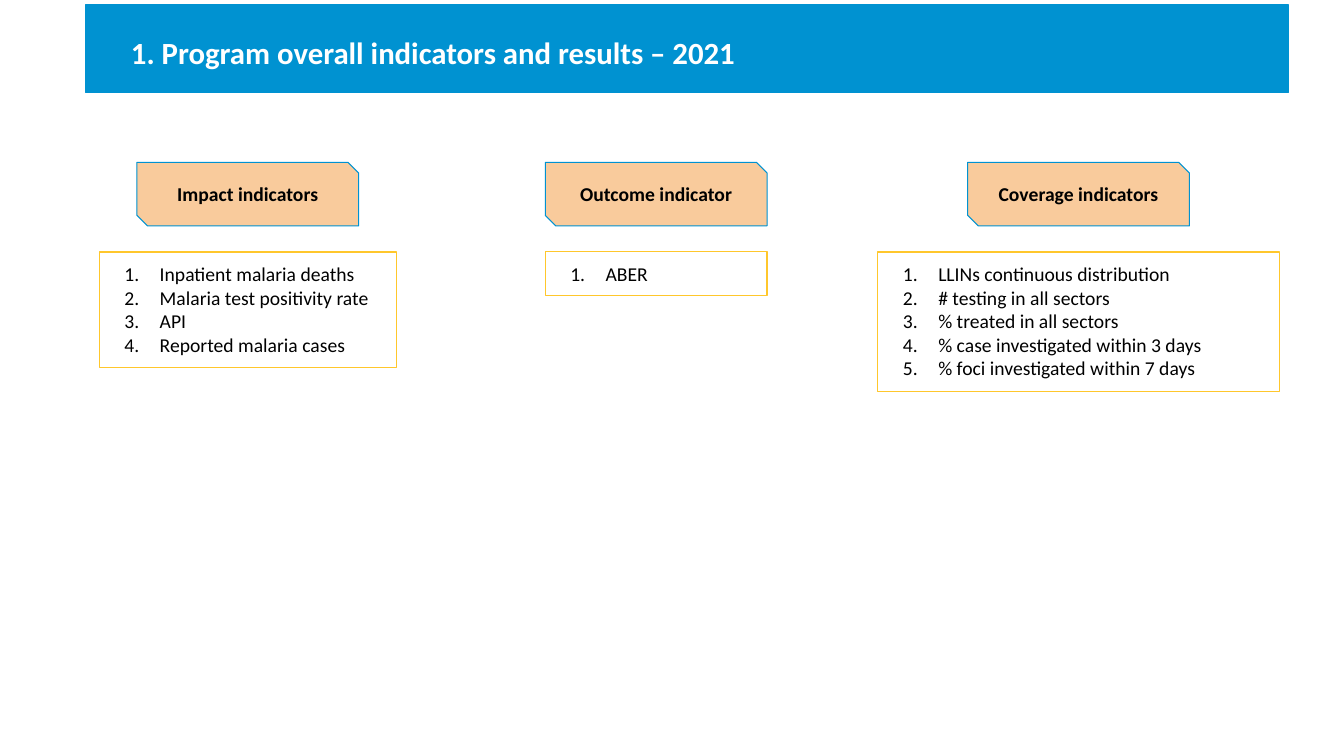
from pptx import Presentation
from pptx.dml.color import RGBColor as Rgb
from pptx.enum.shapes import MSO_SHAPE as Kind
from pptx.enum.text import MSO_ANCHOR as Anchor, PP_ALIGN as Align
from pptx.oxml.ns import qn
from pptx.util import Pt
from lxml.etree import SubElement as Sub

HUES = {"blue": "0092D1", "peach": "F9CB9C", "gold": "FFC72C",
        "white": "FFFFFF", "black": "000000"}
GROUPS = [
    (177, 212, "Impact indicators",
     ["Inpatient malaria deaths", "Malaria test positivity rate", "API",
      "Reported malaria cases"]),
    (468.7, 158.4, "Outcome indicator", ["ABER"]),
    (770.4, 286.6, "Coverage indicators",
     ["LLINs continuous distribution", "# testing in all sectors",
      "% treated in all sectors", "% case investigated within 3 days",
      "% foci investigated within 7 days"]),
]


def hue(name):
    """Return the named colour."""
    return Rgb.from_string(HUES[name])


def panel(slide, kind, left, top, width, height, line, fill=None):
    """Add an outlined shape, filled if a colour is given."""
    shape = slide.shapes.add_shape(kind, Pt(left), Pt(top), Pt(width), Pt(height))
    shape.shadow.inherit = False
    shape.line.color.rgb = hue(line)
    shape.line.width = Pt(0.75)
    if fill:
        shape.fill.solid()
        shape.fill.fore_color.rgb = hue(fill)
    else:
        shape.fill.background()
    return shape


def number(para):
    """Give a paragraph an automatic number and a hanging indent."""
    props = para._p.get_or_add_pPr()
    props.set("marL", str(Pt(36)))
    props.set("indent", str(-Pt(25.2)))
    Sub(props, qn("a:buFont"), typeface="Calibri")
    Sub(props, qn("a:buAutoNum"), type="arabicPeriod")


def write(shape, lines, size=14, color="black", bold=False, align=Align.LEFT,
          anchor=Anchor.MIDDLE, inset=(7.2, 7.2, 7.2, 7.2), space=1.0,
          listed=False):
    """Write one paragraph per line into a shape."""
    frame = shape.text_frame
    frame.word_wrap = True
    frame.vertical_anchor = anchor
    (frame.margin_left, frame.margin_top,
     frame.margin_right, frame.margin_bottom) = map(Pt, inset)
    frame.text = "\n".join(lines)
    for para in frame.paragraphs:
        para.alignment = align
        para.line_spacing = space
        if listed:
            number(para)
        for run in para.runs:
            font = run.font
            font.name, font.size, font.bold = "Calibri", Pt(size), bold
            font.color.rgb = hue(color)


def title(slide, text):
    """Add the title bar."""
    bar = panel(slide, Kind.RECTANGLE, 61.2, 3.6, 859, 62.6, "blue", "blue")
    write(bar, [text], size=22, color="white", bold=True,
          inset=(32.4, 0, 0, 0), space=1.2)


def group(slide, mid, width, head, items):
    """Add a heading and its numbered list, centred on mid."""
    tab = panel(slide, Kind.SNIP_2_DIAG_RECTANGLE, mid - 79.2, 116, 158.4, 45.4,
                "blue", "peach")
    tab.adjustments[0], tab.adjustments[1] = 0, 0.167
    write(tab, [head], bold=True, align=Align.CENTER)
    box = panel(slide, Kind.RECTANGLE, mid - width / 2, 180, width,
                14.4 + 17 * len(items), "gold")
    write(box, items, anchor=Anchor.TOP, listed=True)


def main():
    """Build and save the slide."""
    deck = Presentation()
    deck.slide_width, deck.slide_height = Pt(960), Pt(540)
    slide = deck.slides.add_slide(deck.slide_layouts[6])
    title(slide, "1. Program overall indicators and results – 2021")
    for item in GROUPS:
        group(slide, *item)
    deck.save("out.pptx")


if __name__ == "__main__":
    main()
